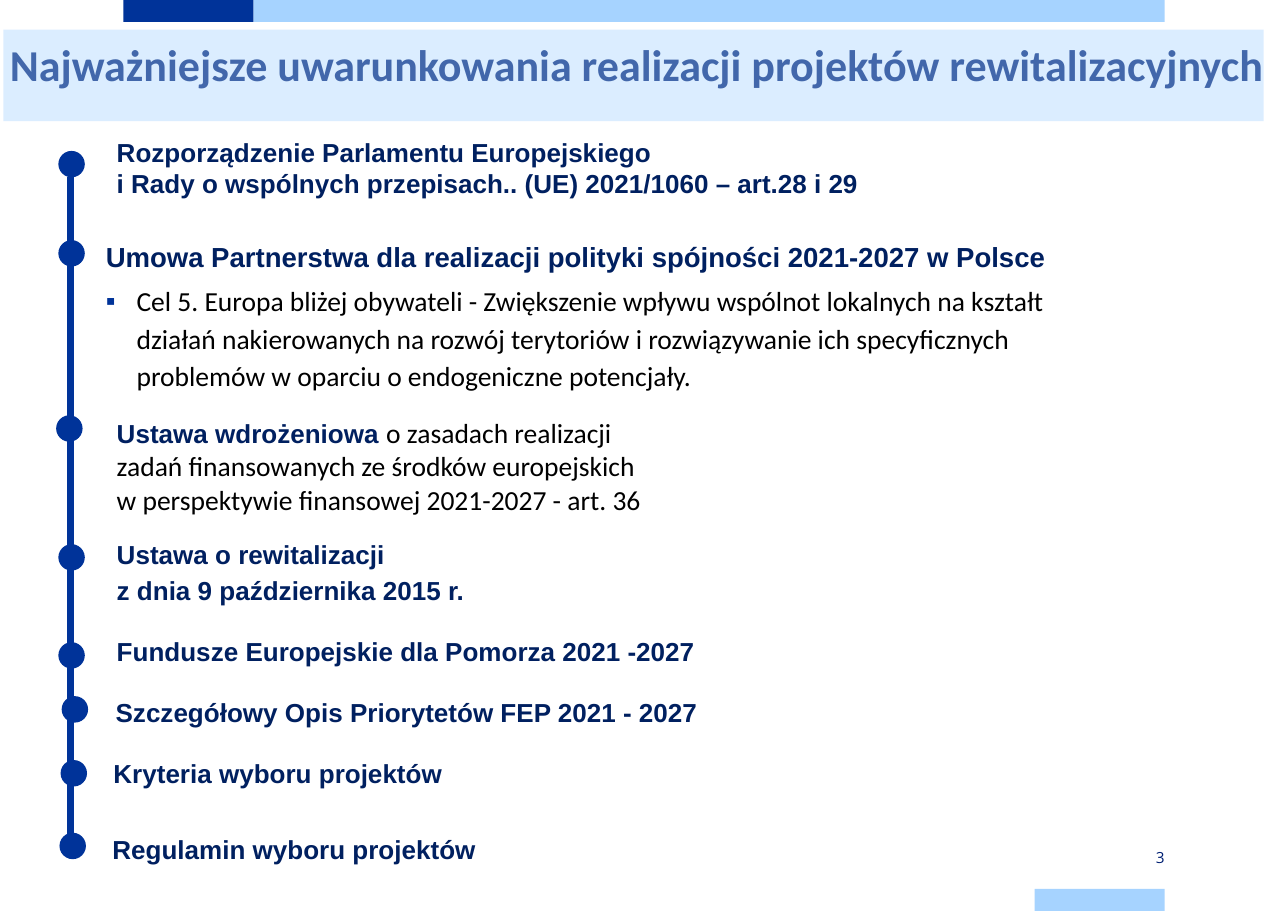
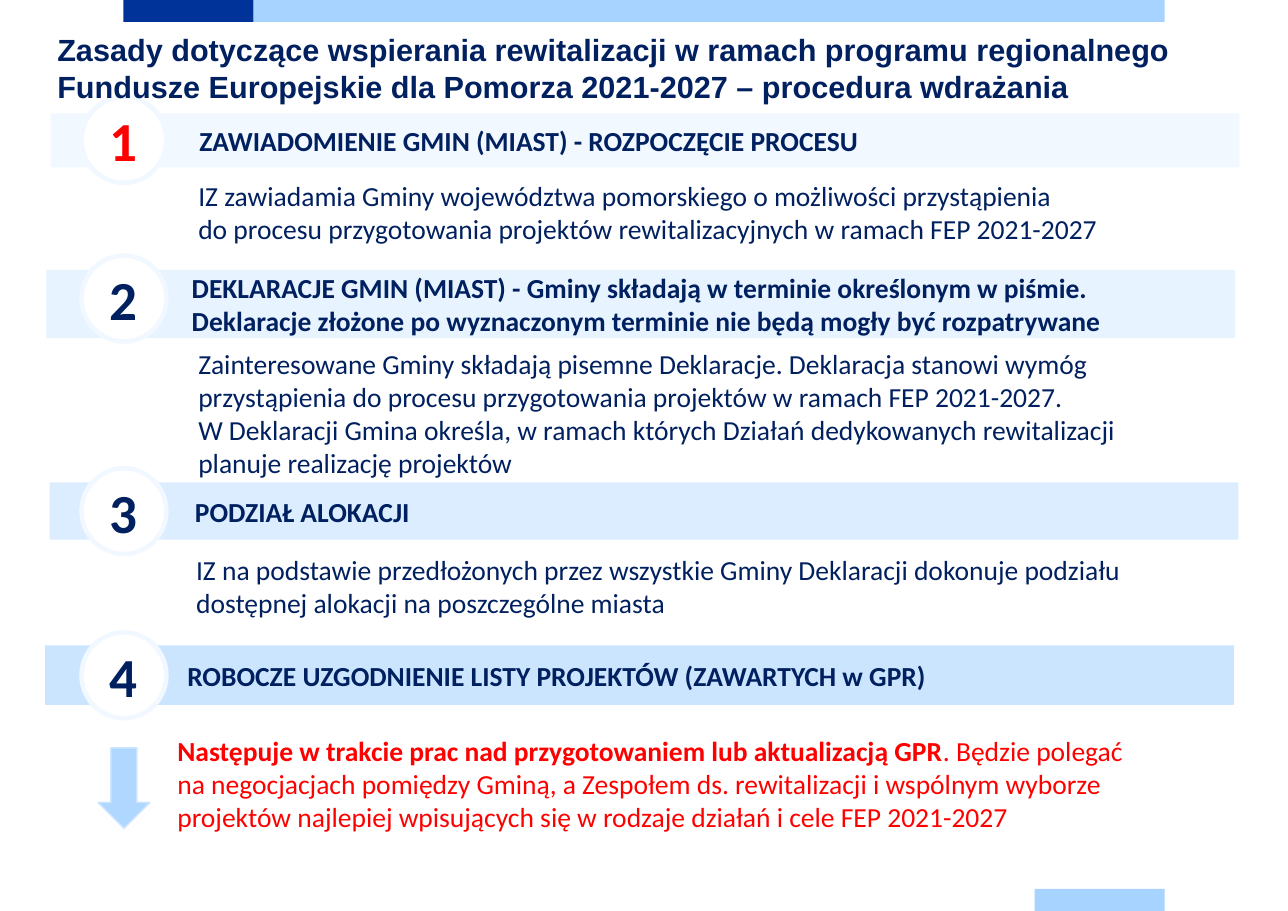
from lxml.etree import SubElement
from pptx import Presentation
from pptx.dml.color import RGBColor
from pptx.enum.shapes import MSO_CONNECTOR, MSO_SHAPE as Preset
from pptx.enum.text import MSO_ANCHOR as Anchor, MSO_AUTO_SIZE as AutoSize, PP_ALIGN as Align
from pptx.oxml.ns import qn
from pptx.util import Inches, Pt

WIDTH, HEIGHT = 11.69, 8.27
COLORS = {
    "blue": "003399", "sky": "A6D3FF", "navy": "002060", "title": "002073",
    "black": "000000", "white": "FFFFFF", "red": "FF0000", "ring": "F1F8FF",
    "arrow": "AFD7FF", "arrow_edge": "CDE6FF",
    "step1": "DDEEFF", "step2": "C5E2FF", "step3": "A6D3FF", "step4": "81C0FF",
}

# Text styles: font, size, colour, bold
HEADING = ("Arial", 17, "navy", True)
PARTNERSHIP = ("Arial", 18, "navy", True)
PLAIN = ("Calibri", 18, "black", False)
STEP_HEAD = ("Calibri", 18, "navy", True)
STEP_BODY = ("Calibri", 18, "navy", False)
ALERT_BOLD = ("Calibri", 18, "red", True)
ALERT = ("Calibri", 18, "red", False)

# Shared bars: left, top, width, colour
BAR_HEIGHT = 0.2
BARS = [
    (1.12, 0, 1.18, "blue"),
    (2.3, 0, 8.27, "sky"),
    (9.39, HEIGHT - BAR_HEIGHT, 1.18, "sky"),
]

# Slide 1 content
CONDITIONS_TITLE = "Najważniejsze uwarunkowania realizacji projektów rewitalizacyjnych"
PARTNERSHIP_TEXT = "Umowa Partnerstwa dla realizacji polityki spójności 2021-2027 w Polsce"
GOAL_TEXT = (
    "Cel 5. Europa bliżej obywateli - Zwiększenie wpływu wspólnot lokalnych na kształt\n"
    "działań nakierowanych na rozwój terytoriów i rozwiązywanie ich specyficznych\n"
    "problemów w oparciu o endogeniczne potencjały."
)
DOT = 0.24
DOTS = [(0.53, 1.37), (0.53, 2.18), (0.51, 3.77), (0.53, 4.94),
        (0.53, 5.83), (0.56, 6.32), (0.55, 6.9), (0.54, 7.56)]
# Legal acts: left, top, height, line spacing, runs
ACTS = [
    (1.06, 1.24, 0.57, 1, [("Rozporządzenie Parlamentu Europejskiego\n"
     "i Rady o wspólnych przepisach.. (UE) 2021/1060 – art.28 i 29", HEADING)]),
    (1.06, 3.78, 0.91, 1, [("Ustawa wdrożeniowa ", HEADING),
     ("o zasadach realizacji\nzadań finansowanych ze środków europejskich\n"
      "w perspektywie finansowej 2021-2027 - art. 36", PLAIN)]),
    (1.06, 4.85, 0.66, 1.14, [("Ustawa o rewitalizacji\nz dnia 9 października 2015 r.", HEADING)]),
    (1.06, 5.73, 0.4, 1.14, [("Fundusze Europejskie dla Pomorza 2021 -2027", HEADING)]),
    (1.05, 6.28, 0.4, 1.14, [("Szczegółowy Opis Priorytetów FEP 2021 - 2027", HEADING)]),
    (1.03, 6.84, 0.4, 1.14, [("Kryteria wyboru projektów", HEADING)]),
    (1.02, 7.53, 0.4, 1.14, [("Regulamin wyboru projektów", HEADING)]),
]

# Slide 2 content
PROCEDURE_TITLE = ("Zasady dotyczące wspierania rewitalizacji w ramach programu regionalnego "
                   "Fundusze Europejskie dla Pomorza 2021-2027 – procedura wdrażania")
BAND_WIDTH = 10.79
RING_LEFT, RING_WIDTH, RING_HEIGHT = 0.74, 0.77, 0.78
STEPS = [
    {"band": (0.46, 1.03, 0.49), "ring_top": 0.88, "number": "red",
     "head_left": 1.81, "head": "ZAWIADOMIENIE GMIN (MIAST) - ROZPOCZĘCIE PROCESU",
     "body_box": (1.8, 1.62, 8.94, 0.61),
     "body": [("IZ zawiadamia Gminy województwa pomorskiego o możliwości przystąpienia\n"
               "do procesu przygotowania projektów rewitalizacyjnych w ramach FEP 2021-2027",
               STEP_BODY)]},
    {"band": (0.42, 2.45, 0.62), "ring_top": 2.32, "number": "navy",
     "head_left": 1.74,
     "head": "DEKLARACJE GMIN (MIAST) - Gminy składają w terminie określonym w piśmie.\n"
             "Deklaracje złożone po wyznaczonym terminie nie będą mogły być rozpatrywane",
     "body_box": (1.8, 3.15, 9.04, 1.16),
     "body": [("Zainteresowane Gminy składają pisemne Deklaracje. Deklaracja stanowi wymóg "
               "przystąpienia do procesu przygotowania projektów w ramach FEP 2021-2027.\n"
               "W Deklaracji Gmina określa, w ramach których Działań dedykowanych rewitalizacji "
               "planuje realizację projektów", STEP_BODY)]},
    {"band": (0.45, 4.38, 0.52), "ring_top": 4.25, "number": "navy",
     "head_left": 1.77, "head": "PODZIAŁ ALOKACJI",
     "body_box": (1.78, 5.02, 9.29, 0.74),
     "body": [("IZ na podstawie przedłożonych przez wszystkie Gminy Deklaracji dokonuje podziału "
               "dostępnej alokacji na poszczególne miasta", STEP_BODY)]},
    {"band": (0.41, 5.86, 0.54), "ring_top": 5.74, "number": "navy",
     "head_left": 1.7, "head": "ROBOCZE UZGODNIENIE LISTY PROJEKTÓW (ZAWARTYCH w GPR)",
     "body_box": (1.61, 6.66, 8.81, 1.05),
     "body": [("Następuje w trakcie prac nad przygotowaniem lub aktualizacją GPR", ALERT_BOLD),
              (". Będzie polegać\nna negocjacjach pomiędzy Gminą, a Zespołem ds. rewitalizacji "
               "i wspólnym wyborze projektów najlepiej wpisujących się w rodzaje działań "
               "i cele FEP 2021-2027", ALERT)]},
]


def rgb(name):
    return RGBColor.from_string(COLORS[name])


def place(shape, box):
    shape.left, shape.top, shape.width, shape.height = map(Inches, box)


def write(paragraph, runs, spacing=1, after=0, align=Align.LEFT):
    """Fill a paragraph with (text, style) runs; a newline is a line break."""
    paragraph.alignment, paragraph.line_spacing = align, spacing
    paragraph.space_before, paragraph.space_after = Pt(0), Pt(after)
    for text, (font, size, color, bold) in runs:
        for index, line in enumerate(text.split("\n")):
            if index:
                paragraph.add_line_break()
                line_break = paragraph._p.findall(qn("a:br"))[-1]
                SubElement(line_break, qn("a:rPr"), sz=str(round(size * 100)))
            run = paragraph.add_run()
            run.text = line
            run.font.name, run.font.size, run.font.bold = font, Pt(size), bold
            run.font.color.rgb = rgb(color)


def prepare(frame, anchor=Anchor.TOP, inset=0):
    frame.word_wrap, frame.auto_size = True, AutoSize.NONE
    frame.vertical_anchor = anchor
    frame.margin_left = frame.margin_right = Inches(inset)
    frame.margin_top = frame.margin_bottom = Inches(inset / 2)
    return frame.paragraphs[0]


def add_text(slide, box, runs, anchor=Anchor.TOP, **layout):
    frame = slide.shapes.add_textbox(*map(Inches, box)).text_frame
    write(prepare(frame, anchor), runs, **layout)


def add_figure(slide, preset, box, fill, alpha=None, edge=None, edge_width=1):
    figure = slide.shapes.add_shape(preset, *map(Inches, box))
    figure.shadow.inherit = False
    figure.fill.solid()
    figure.fill.fore_color.rgb = rgb(fill)
    if alpha:
        color = figure.element.spPr.find(".//" + qn("a:srgbClr"))
        SubElement(color, qn("a:alpha"), val=str(alpha * 1000))
    if edge:
        figure.line.color.rgb = rgb(edge)
        figure.line.width = Pt(edge_width)
    else:
        figure.line.fill.background()
    return figure


def set_bullet(paragraph, indent=0, symbol=None):
    props = paragraph._p.get_or_add_pPr()
    props.set("marL", str(Inches(indent)))
    props.set("indent", str(-Inches(indent)))
    if symbol:
        color = SubElement(props, qn("a:buClr"))
        SubElement(color, qn("a:srgbClr"), val=COLORS["blue"])
        SubElement(props, qn("a:buFont"), typeface="Arial")
        SubElement(props, qn("a:buChar"), char=symbol)
    else:
        SubElement(props, qn("a:buNone"))


def set_title(slide, box, text, style, inset=0, spacing=1):
    title = slide.shapes.title
    place(title, box)
    write(prepare(title.text_frame, inset=inset), [(text, style)], spacing)
    return title


def add_bars(prs, slide):
    """Draw the bars once and hand them to the slide master."""
    for left, top, width, color in BARS:
        bar = add_figure(slide, Preset.RECTANGLE, (left, top, width, BAR_HEIGHT), color)
        prs.slide_master.shapes.element.insert(2, bar.element)


def build_conditions(slide):
    set_title(slide, (0.09, 0.32, 11.63, 0.75), CONDITIONS_TITLE,
              ("Calibri", 28.8, "title", True), spacing=Pt(36))
    add_text(slide, (9.39, 7.68, 1.18, 0.2), [("3", ("Open Sans", 10, "title", False))],
             Anchor.MIDDLE, align=Align.RIGHT)

    # Partnership agreement and its goal
    agreement = slide.placeholders[1]
    place(agreement, (0.96, 2.14, 10.22, 1.61))
    heading = prepare(agreement.text_frame)
    set_bullet(heading)
    write(heading, [(PARTNERSHIP_TEXT, PARTNERSHIP)], 1.14, 4)
    goal = agreement.text_frame.add_paragraph()
    set_bullet(goal, 0.28, "▪")
    write(goal, [(GOAL_TEXT, PLAIN)], 1.14, 4)

    # Timeline
    axis = slide.shapes.add_connector(
        MSO_CONNECTOR.STRAIGHT, *map(Inches, (0.64, 1.61, 0.64, 7.6)))
    axis.line.color.rgb, axis.line.width = rgb("blue"), Pt(4.25)
    SubElement(axis.element.spPr, qn("a:effectLst"))
    for left, top in DOTS:
        add_figure(slide, Preset.OVAL, (left, top, DOT, DOT), "blue")
    for left, top, height, spacing, runs in ACTS:
        add_text(slide, (left, top, 8.4, height), runs, spacing=spacing)

    # Translucent veil over the title
    add_figure(slide, Preset.RECTANGLE, (0.03, 0.27, 11.44, 0.83), "sky", alpha=40)


def build_procedure(slide):
    for number, step in enumerate(STEPS, 1):
        left, top, height = step["band"]
        add_figure(slide, Preset.RECTANGLE, (left, top, BAND_WIDTH, height),
                   f"step{number}", alpha=40)
        ring = add_figure(slide, Preset.OVAL,
                          (RING_LEFT, step["ring_top"], RING_WIDTH, RING_HEIGHT),
                          "white", edge="ring", edge_width=3)
        write(prepare(ring.text_frame, Anchor.MIDDLE, 0.1),
              [(str(number), ("Calibri", 36, step["number"], True))], align=Align.CENTER)
        add_text(slide, (step["head_left"], top, 9.2, height),
                 [(step["head"], STEP_HEAD)], Anchor.MIDDLE)
        add_text(slide, step["body_box"], step["body"])
    add_figure(slide, Preset.DOWN_ARROW, (0.89, 6.79, 0.47, 0.73), "arrow", edge="arrow_edge")

    # The title stays in front of the first ring
    title = set_title(slide, (0.42, 0.23, 10.9, 0.77), PROCEDURE_TITLE,
                      ("Arial", 20, "navy", True), inset=0.1)
    slide.shapes.element.append(title.element)


def main():
    prs = Presentation()
    prs.slide_width, prs.slide_height = Inches(WIDTH), Inches(HEIGHT)
    conditions = prs.slides.add_slide(prs.slide_layouts[1])
    procedure = prs.slides.add_slide(prs.slide_layouts[5])
    add_bars(prs, conditions)
    build_conditions(conditions)
    build_procedure(procedure)
    prs.save("out.pptx")


if __name__ == "__main__":
    main()
